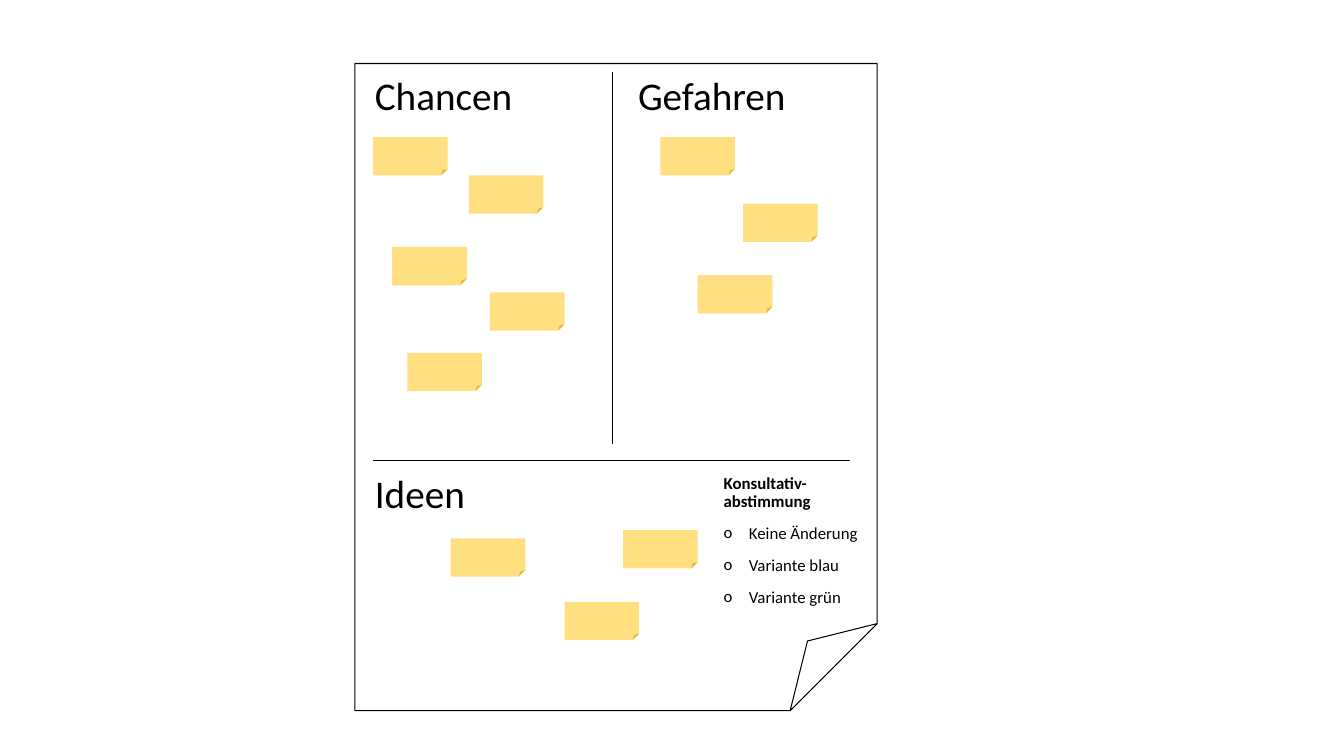
import pptx
import pptx.util
import pptx.dml.color
import pptx.enum.shapes
from lxml import etree
from pptx.oxml.ns import qn

# Content
HEADINGS = [  # text, left, top, width, height
    ("Chancen", 3.62, 0.71, 2.33, 4.42),
    ("Gefahren", 6.23, 0.71, 2.33, 4.42),
    ("Ideen", 3.62, 4.66, 4.93, 2.21),
]
DIVIDERS = [(6.07, 0.71, 6.07, 4.4), (8.43, 4.57, 3.7, 4.57)]
NOTES = {  # left, top of each sticky note
    "Chancen": [(3.7, 1.36), (4.65, 1.74), (3.89, 2.45), (4.86, 2.9), (4.04, 3.5)],
    "Gefahren": [(6.55, 1.36), (7.37, 2.02), (6.92, 2.73)],
    "Ideen": [(4.47, 5.34), (5.6, 5.97), (6.18, 5.26)],
}
NOTE_SIZE = (0.74, 0.38)
VOTE_TITLE = "Konsultativ-abstimmung"
VOTE_OPTIONS = ["Keine Änderung", "Variante blau", "Variante grün"]
VOTE_BOX = (7.08, 4.66, 1.57, 2.21)
SHEET = (3.52, 0.63, 5.18, 6.42)
BLACK, YELLOW = "000000", "FFC000"

Inches, Pt = pptx.util.Inches, pptx.util.Pt


def color(code):
    return pptx.dml.color.RGBColor.from_string(code)


def add_text_box(box):
    tf = s.shapes.add_textbox(*map(Inches, box)).text_frame
    tf.word_wrap = True
    return tf


def write(p, text, size, bold=False, before=0):
    p.line_spacing = 0.9
    p.space_before = Pt(before)
    r = p.add_run()
    r.text = text
    r.font.name = "Calibri"
    r.font.size = Pt(size)
    r.font.bold = bold
    r.font.color.rgb = color(BLACK)


def add_bullet(p):
    pPr = p._p.get_or_add_pPr()
    pPr.set("marL", str(Inches(0.25)))
    pPr.set("indent", str(-Inches(0.25)))
    etree.SubElement(pPr, qn("a:buFont")).set("typeface", "Calibri")
    etree.SubElement(pPr, qn("a:buChar")).set("char", "o")


def add_folded(box):
    sp = s.shapes.add_shape(
        pptx.enum.shapes.MSO_SHAPE.FOLDED_CORNER, *map(Inches, box))
    sp.shadow.inherit = False
    return sp


prs = pptx.Presentation()
prs.slide_width, prs.slide_height = Inches(13.33), Inches(7.5)
s = prs.slides.add_slide(prs.slide_layouts[6])

# Section headings
for text, *box in HEADINGS:
    write(add_text_box(box).paragraphs[0], text, 28)

# Dividing lines
for ends in DIVIDERS:
    line = s.shapes.add_connector(
        pptx.enum.shapes.MSO_CONNECTOR.STRAIGHT, *map(Inches, ends))
    line.line.color.rgb = color(BLACK)
    line.line.width = Pt(0.5)
    etree.SubElement(line._element.spPr, qn("a:effectLst"))

# Half-transparent sticky notes
for positions in NOTES.values():
    for position in positions:
        note = add_folded(position + NOTE_SIZE)
        note.fill.solid()
        note.fill.fore_color.rgb = color(YELLOW)
        note.line.fill.background()
        srgb = note._element.spPr.find(qn("a:solidFill")).find(qn("a:srgbClr"))
        etree.SubElement(srgb, qn("a:alpha")).set("val", "50000")

# Vote list
tf = add_text_box(VOTE_BOX)
write(tf.paragraphs[0], VOTE_TITLE, 12, bold=True)
for option in VOTE_OPTIONS:
    p = tf.add_paragraph()
    p.line_spacing = 0.9
    p.space_before = Pt(10)
    add_bullet(p)
    write(p, option, 12, before=10)

# Flipchart sheet outline
sheet = add_folded(SHEET)
sheet.fill.background()
sheet.line.color.rgb = color(BLACK)
sheet.line.width = Pt(0.75)

prs.save("out.pptx")
